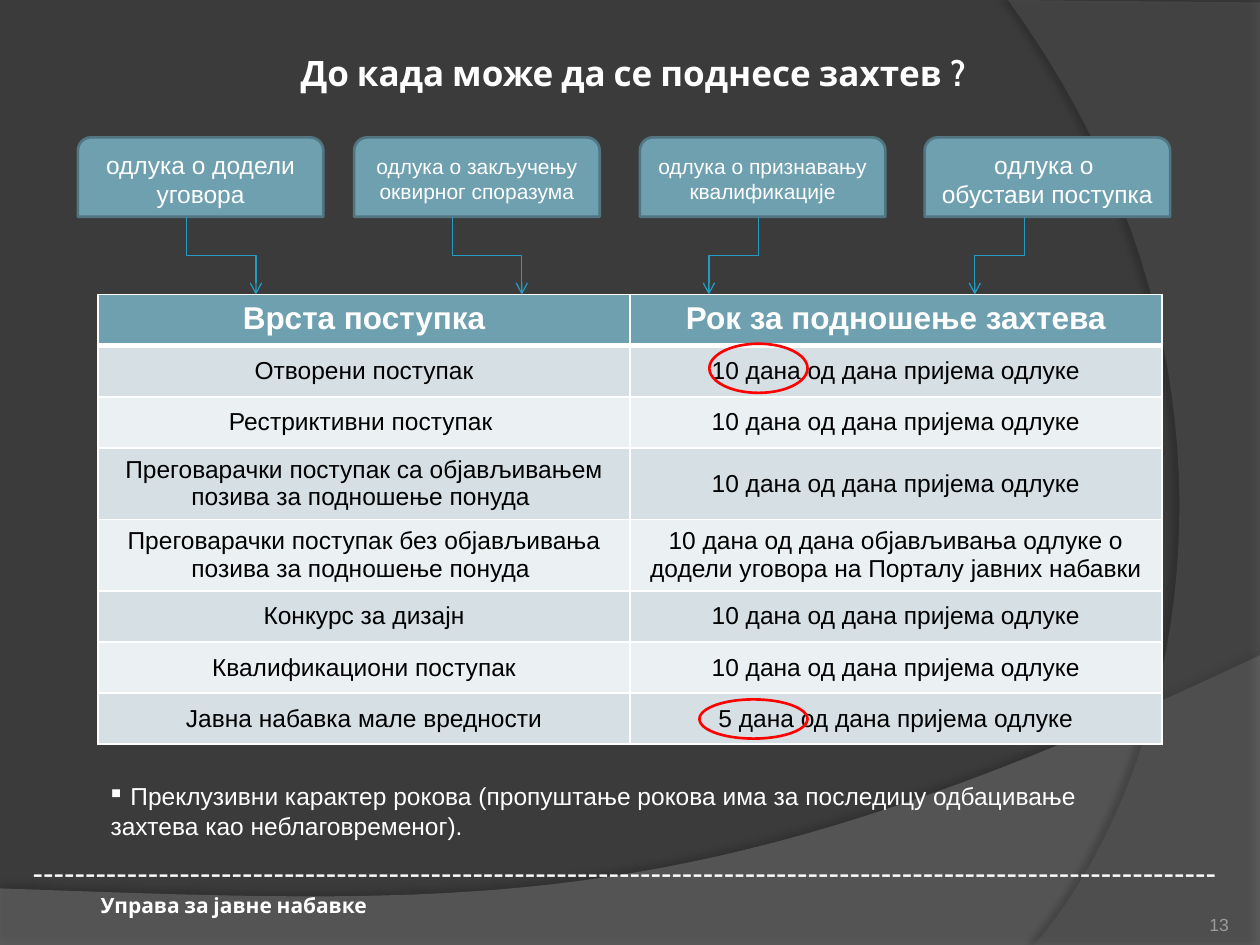
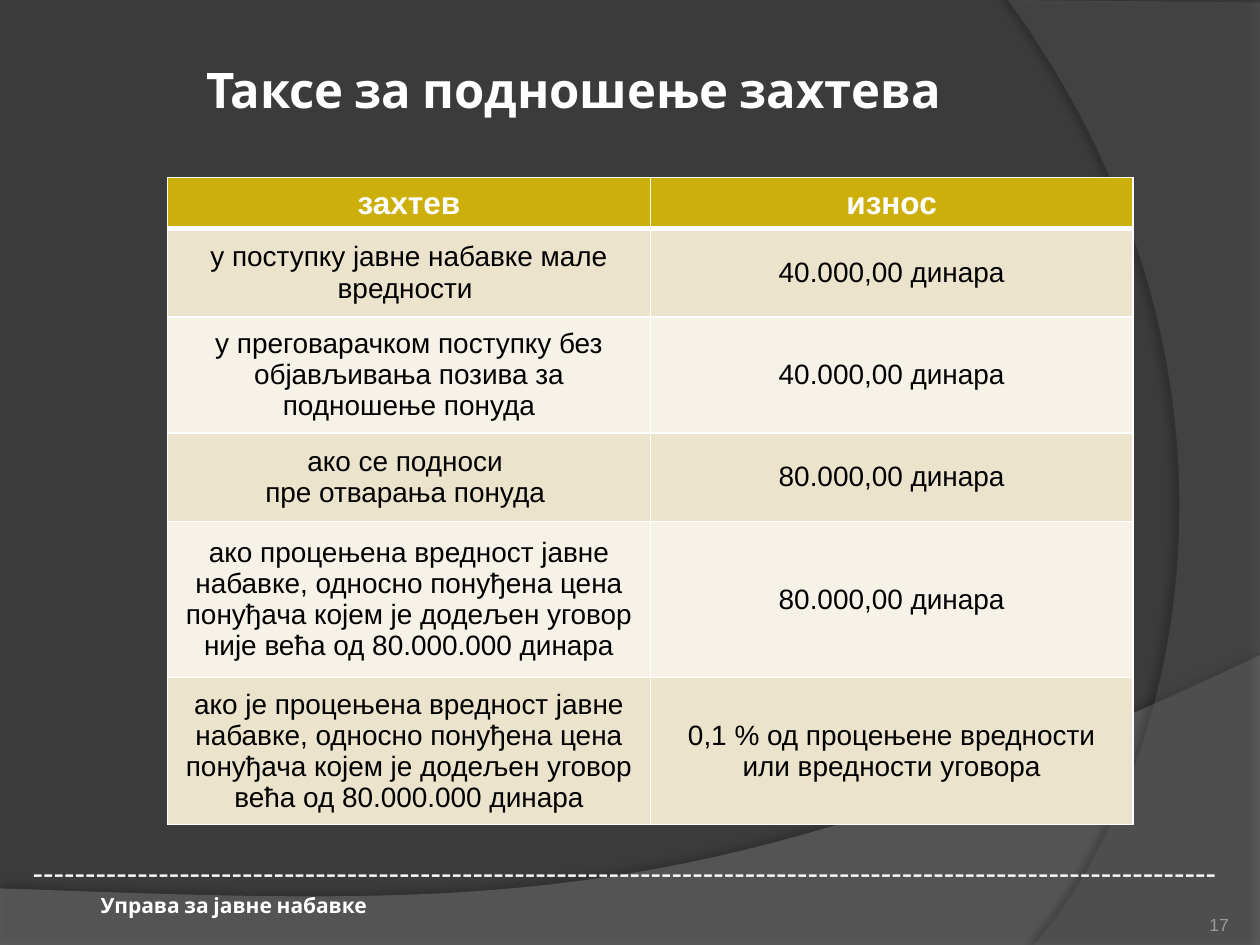
from dataclasses import dataclass

from lxml import etree
from pptx import Presentation
from pptx.dml.color import RGBColor
from pptx.enum.shapes import MSO_CONNECTOR as Link, MSO_SHAPE as Preset
from pptx.enum.text import MSO_ANCHOR as Anchor, PP_ALIGN as Align
from pptx.oxml.ns import qn
from pptx.util import Cm, Pt


@dataclass(frozen=True)
class Theme:
    body_font: str = "Arial"
    title_font: str = "Cabin"
    background: str = "3B3B3B"
    white: str = "FFFFFF"
    black: str = "000000"
    lower_wave: str = "7F7F7F"
    right_wave: str = "5E5E5E"
    page_number: str = "9D9B9A"
    decision_line: str = "517682"
    arrow: str = "239BC2"
    highlight: str = "FF0000"
    teal: tuple = ("6EA0B0", "D5DFE4", "EBF0F2")  # header, odd rows, even rows
    gold: tuple = ("CCAF0A", "ECE3CC", "F6F2E7")
    header_size: int = 18
    rule_size: int = 18
    note_size: int = 14
    footer_size: int = 12
    number_size: int = 10


THEME = Theme()


def rgb(color):
    return RGBColor.from_string(color)


def sub(parent, tag, **attributes):
    return etree.SubElement(parent, qn(tag), attributes)


def style_text(frame, size, color, font=THEME.body_font, bold=False, align=Align.CENTER):
    for paragraph in frame.paragraphs:
        paragraph.alignment = align
        paragraph.font.size = Pt(size)
        paragraph.font.name = font
        paragraph.font.bold = bold
        paragraph.font.color.rgb = rgb(color)


def add_text(slide, box, text, size, color=THEME.white, inset=None, anchor=Anchor.TOP,
             wrap=True, **style):
    frame = slide.shapes.add_textbox(*map(Cm, box)).text_frame
    frame.word_wrap = wrap
    frame.vertical_anchor = anchor
    if inset is not None:
        frame.margin_left = frame.margin_right = Cm(inset)
        frame.margin_top = frame.margin_bottom = Cm(inset)
    frame.text = text
    style_text(frame, size, color, **style)
    return frame


def bezier(start, control_1, control_2, end, steps=40):
    """Points along a cubic curve, without its start."""
    points = []
    for step in range(1, steps + 1):
        t = step / steps
        weights = ((1 - t) ** 3, 3 * t * (1 - t) ** 2, 3 * t * t * (1 - t), t ** 3)
        corners = (start, control_1, control_2, end)
        points.append(tuple(sum(w * c[axis] for w, c in zip(weights, corners))
                            for axis in (0, 1)))
    return points


def add_wave(slide, corners, curve, color, opacity, shadow_opacity, distance, direction):
    """Translucent area with straight corners, closed by a curve from the last one."""
    outline = [(Cm(x), Cm(y)) for x, y in corners + bezier(corners[-1], *curve)]
    builder = slide.shapes.build_freeform(*outline[0])
    builder.add_line_segments(outline[1:], close=True)
    wave = builder.convert_to_shape()
    wave.fill.solid()
    wave.fill.fore_color.rgb = rgb(color)
    fill_color = wave._element.spPr.find(qn("a:solidFill"))[0]
    sub(fill_color, "a:alpha", val=str(opacity * 1000))
    wave.line.fill.background()
    wave.shadow.inherit = False
    shadow = sub(wave._element.spPr.find(qn("a:effectLst")), "a:outerShdw",
                 blurRad=str(Pt(4)), dist=str(Pt(distance)), dir=str(direction * 60000),
                 algn="ctr", rotWithShape="0")
    shade = sub(shadow, "a:srgbClr", val=THEME.black)
    sub(shade, "a:alpha", val=str(shadow_opacity * 1000))


def add_base_slide(deck, number, title, title_box, title_size):
    """Slide with the shared background, title, dashed rule, footer and number."""
    slide = deck.slides.add_slide(deck.slide_layouts[6])
    slide.background.fill.solid()
    slide.background.fill.fore_color.rgb = rgb(THEME.background)
    add_wave(slide, [(0, 17.91), (0, 19.05), (25.4, 19.05), (25.4, 13.21)],
             [(14.2, 18.52), (9.93, 18.26), (0, 17.91)],
             THEME.lower_wave, 45, 35, 3.5, 270)
    add_wave(slide, [(25.4, 0.05), (25.4, 19.05), (20.85, 19.05)],
             [(23.75, 15.72), (25.86, 7.62), (20.32, 0)],
             THEME.right_wave, 40, 45, 4, 180)
    add_text(slide, title_box, title, title_size, inset=0.13, anchor=Anchor.MIDDLE,
             font=THEME.title_font, bold=True)
    add_text(slide, (0.41, 17.07, 24.46, 1.02), "-" * 113, THEME.rule_size,
             wrap=False, align=Align.LEFT)
    add_text(slide, (1.78, 17.86, 7.95, 0.76), "Управа за јавне набавке",
             THEME.footer_size, font=THEME.title_font, bold=True, align=Align.LEFT)
    add_text(slide, (22.66, 17.83, 2.11, 1.02), str(number), THEME.number_size,
             THEME.page_number, inset=0, anchor=Anchor.BOTTOM, align=Align.RIGHT)
    return slide


def set_borders(cell, bottom):
    properties = cell._tc.get_or_add_tcPr()
    widths = {"a:lnL": 1, "a:lnR": 1, "a:lnT": 1, "a:lnB": bottom}
    for position, (tag, width) in enumerate(widths.items()):
        border = etree.Element(qn(tag), w=str(Pt(width)))
        sub(sub(border, "a:solidFill"), "a:srgbClr", val=THEME.white)
        properties.insert(position, border)


def add_banded_table(slide, left, top, column_width, heights, rows, palette, body_size,
                     header_anchor=Anchor.MIDDLE):
    columns = len(rows[0])
    table = slide.shapes.add_table(len(rows), columns, Cm(left), Cm(top),
                                   Cm(column_width * columns), Cm(sum(heights))).table
    for column in table.columns:
        column.width = Cm(column_width)
    for r, (height, texts) in enumerate(zip(heights, rows)):
        header = r == 0
        table.rows[r].height = Cm(height)
        for c, text in enumerate(texts):
            cell = table.cell(r, c)
            cell.text = text
            cell.vertical_anchor = header_anchor if header else Anchor.MIDDLE
            cell.fill.solid()
            cell.fill.fore_color.rgb = rgb(palette[0 if header else 2 - r % 2])
            set_borders(cell, bottom=3 if header or r == 0 else 1)
            style_text(cell.text_frame, THEME.header_size if header else body_size,
                       THEME.white if header else THEME.black, bold=header)


def add_decision(slide, left, top, height, text, size):
    decision = slide.shapes.add_shape(Preset.ROUND_2_SAME_RECTANGLE, Cm(left), Cm(top),
                                      Cm(4.95), Cm(height))
    decision.shadow.inherit = False
    decision.fill.solid()
    decision.fill.fore_color.rgb = rgb(THEME.teal[0])
    decision.line.color.rgb = rgb(THEME.decision_line)
    decision.line.width = Pt(1.5)
    decision.text_frame.word_wrap = True
    decision.text_frame.vertical_anchor = Anchor.MIDDLE
    decision.text_frame.text = text
    style_text(decision.text_frame, size, THEME.white)


def add_down_arrow(slide, x, top, shift, bottom):
    """Elbow arrow that leaves downwards, moves sideways by shift and ends downwards."""
    drop = bottom - top
    middle_x, middle_y = x + shift / 2, (top + bottom) / 2
    # The elbow lies flat before its quarter turn, so the sides are swapped.
    half_width, half_height = drop / 2, abs(shift) / 2
    arrow = slide.shapes.add_connector(
        Link.ELBOW, Cm(middle_x - half_width), Cm(middle_y - half_height),
        Cm(middle_x + half_width), Cm(middle_y + half_height))
    arrow.line.color.rgb = rgb(THEME.arrow)
    arrow.line.width = Pt(0.75)
    properties = arrow._element.spPr
    frame = properties.find(qn("a:xfrm"))
    frame.set("rot", str((270 if shift > 0 else 90) * 60000))
    if shift > 0:
        frame.set("flipH", "1")
    sub(properties.find(qn("a:ln")), "a:tailEnd", type="arrow")
    sub(properties, "a:effectLst")


def add_highlight(slide, *box):
    ring = slide.shapes.add_shape(Preset.OVAL, *map(Cm, box))
    ring.shadow.inherit = False
    ring.fill.background()
    ring.line.color.rgb = rgb(THEME.highlight)
    ring.line.width = Pt(1.5)


def add_bullet_note(slide, box, text):
    frame = add_text(slide, box, "", THEME.note_size)
    paragraph = frame.paragraphs[0]
    properties = paragraph._p.get_or_add_pPr()
    for child in list(properties):
        properties.remove(child)
    properties.set("marL", "0")
    properties.set("indent", "0")
    sub(properties, "a:buFont", typeface=THEME.body_font)
    sub(properties, "a:buChar", char="▪")
    paragraph.alignment = Align.LEFT
    for part, size in ((" ", THEME.header_size), (text, THEME.note_size)):
        run = paragraph.add_run()
        run.text = part
        run.font.size = Pt(size)
        run.font.name = THEME.body_font
        run.font.color.rgb = rgb(THEME.white)


def build_deadlines(deck):
    slide = add_base_slide(deck, 13, "До када може да се поднесе захтев ?",
                           (1.4, 0.58, 22.73, 1.78), 20)
    usual = "10 дана од дана пријема одлуке"
    rows = [
        ("Врста поступка", "Рок за подношење захтева"),
        ("Отворени поступак", usual),
        ("Рестриктивни поступак ", usual),
        ("Преговарачки поступак са објављивањем позива за подношење понуда ", usual),
        ("Преговарачки поступак без објављивања позива за подношење понуда ",
         "10 дана од дана објављивања одлуке о додели уговора на Порталу јавних набавки"),
        ("Конкурс за дизајн", usual),
        ("Квалификациони поступак", usual),
        ("Јавна набавка мале вредности", "5 дана од дана пријема одлуке"),
    ]
    single, double = 1.03, 1.44
    heights = [single] * 3 + [double] * 2 + [single] * 3
    table_top = 5.94
    add_banded_table(slide, 1.98, table_top, 10.72, heights, rows, THEME.teal, 14,
                     header_anchor=Anchor.TOP)

    decision_top, decision_height = 2.77, 1.6
    decisions = [  # left, text, size, arrow start, arrow shift
        (1.57, "одлука о додели уговора", 14, 3.76, 1.4),
        (7.14, "одлука о закључењу оквирног споразума", 12, 9.12, 1.4),
        (12.9, "одлука о признавању квалификације", 12, 15.29, -1),
        (18.64, "одлука о \nобустави поступка", 14, 20.65, -1),
    ]
    for left, text, size, arrow_x, shift in decisions:
        add_decision(slide, left, decision_top, decision_height, text, size)
        add_down_arrow(slide, arrow_x, decision_top + decision_height, shift, table_top)

    add_bullet_note(slide, (1.98, 15.47, 21.23, 1.63),
                    "Преклузивни карактер рокова (пропуштање рокова има за последицу "
                    "одбацивање захтева као неблаговременог).")
    add_highlight(slide, 14.3, 6.93, 1.98, 0.99)
    add_highlight(slide, 14.1, 14.1, 2.18, 0.79)


def build_fees(deck):
    slide = add_base_slide(deck, 17, "Таксе за подношење захтева",
                           (1.19, 0.99, 20.75, 1.6), 28)
    low, high = "40.000,00 динара", "80.000,00 динара"
    value = ("процењена вредност јавне набавке, односно понуђена цена понуђача "
             "којем је додељен уговор")
    rows = [
        ("захтев", "износ"),
        ("у поступку јавне набавке мале вредности ", low),
        ("у преговарачком поступку без објављивања позива за подношење понуда", low),
        ("ако се подноси \nпре отварања понуда ", high),
        (f"ако {value} није већа од 80.000.000 динара", high),
        (f"ако је {value} већа од 80.000.000 динара",
         "0,1 % од процењене вредности или вредности уговора"),
    ]
    add_banded_table(slide, 3.38, 3.58, 9.73, [1.03, 1.78, 2.34, 1.78, 3.15, 2.77],
                     rows, THEME.gold, 16)


def main():
    deck = Presentation()
    deck.slide_width, deck.slide_height = Cm(25.4), Cm(19.05)
    build_deadlines(deck)
    build_fees(deck)
    deck.save("out.pptx")


if __name__ == "__main__":
    main()
